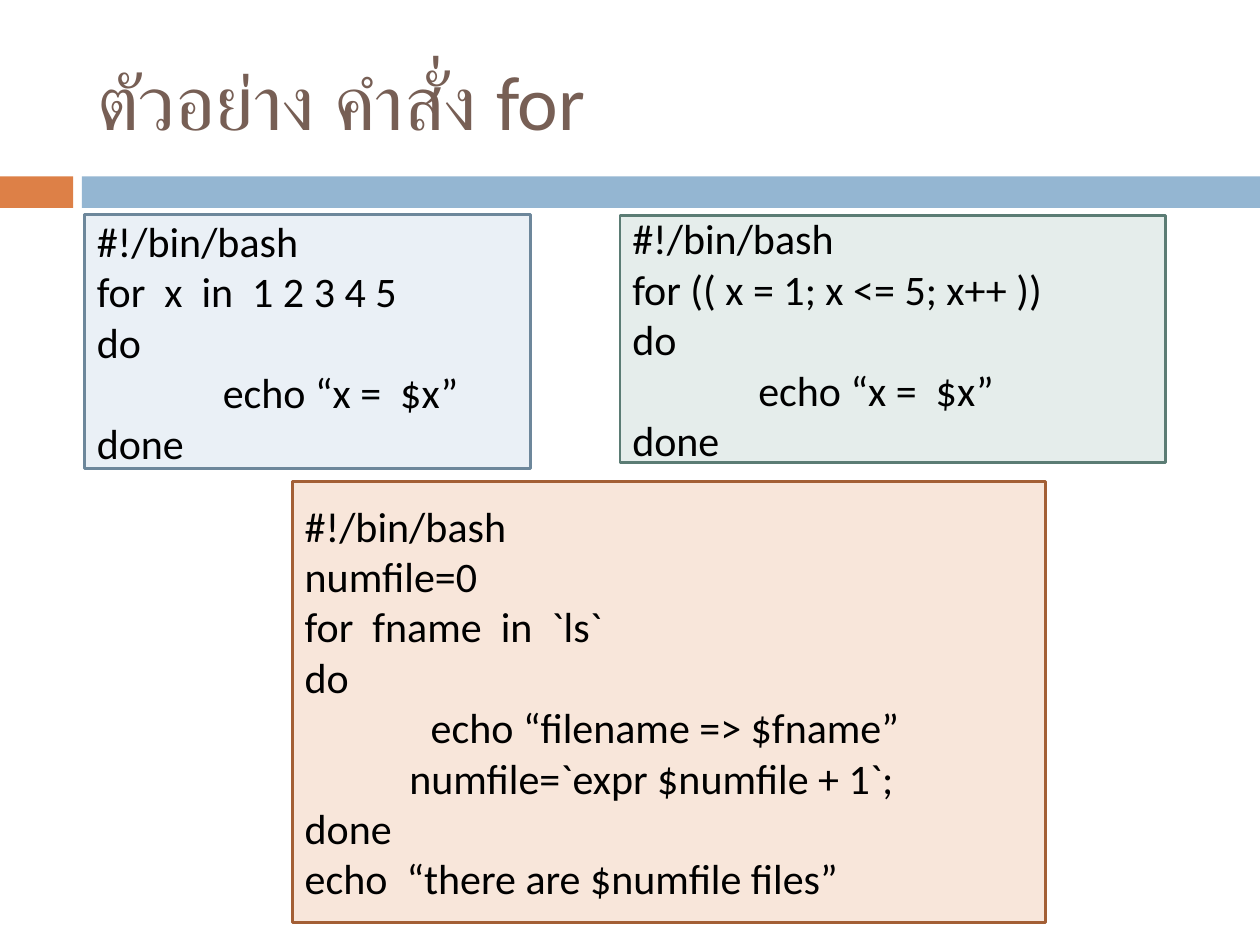
from dataclasses import dataclass

from pptx import Presentation
from pptx.dml.color import RGBColor
from pptx.enum.shapes import MSO_SHAPE
from pptx.enum.text import MSO_ANCHOR, PP_ALIGN
from pptx.util import Inches, Pt


@dataclass(frozen=True)
class Theme:
    font: str = "Calibri"
    title_size: int = 44
    code_size: int = 24
    line_width: float = 1.5
    title: str = "775F55"
    text: str = "000000"
    orange: str = "DD8047"
    blue: str = "94B6D2"
    # (fill, outline) of each kind of code box
    code_blue: tuple = ("EAF0F6", "6D879B")
    code_green: tuple = ("E5EDEB", "5B7C74")
    code_orange: tuple = ("F8E6DA", "A35F35")


THEME = Theme()

# Each line of code is (indent in inches, text)
LIST_LOOP = [
    (0, "#!/bin/bash"),
    (0, "for  x  in  1 2 3 4 5"),
    (0, "do"),
    (1, "echo “x =  $x”"),
    (0, "done"),
]
COUNTER_LOOP = [
    (0, "#!/bin/bash"),
    (0, "for (( x = 1; x <= 5; x++ ))"),
    (0, "do"),
    (1, "echo “x =  $x”"),
    (0, "done"),
]
FILE_LOOP = [
    (0, "#!/bin/bash"),
    (0, "numfile=0"),
    (0, "for  fname  in  `ls`"),
    (0, "do"),
    (1, "echo “filename => $fname”"),
    (0.83, "numfile=`expr $numfile + 1`;"),
    (0, "done"),
    (0, "echo  “there are $numfile files”"),
]


def add_text(p, text, *, size, color, indent=0):
    p.alignment = PP_ALIGN.LEFT
    if indent:
        p._p.get_or_add_pPr().set("marL", str(Inches(indent)))
    r = p.add_run()
    r.text = text
    r.font.name = THEME.font
    r.font.size = Pt(size)
    r.font.color.rgb = RGBColor.from_string(color)


def add_rect(s, box, fill, line=None):
    sp = s.shapes.add_shape(MSO_SHAPE.RECTANGLE, *map(Inches, box))
    sp.shadow.inherit = False
    sp.fill.solid()
    sp.fill.fore_color.rgb = RGBColor.from_string(fill)
    if line:
        sp.line.color.rgb = RGBColor.from_string(line)
        sp.line.width = Pt(THEME.line_width)
    else:
        sp.line.fill.background()
    return sp


def add_band(s, box, tab=0.58, gap=0.07):
    """Draw a short orange tab and, after a gap, a blue bar to the box's end."""
    left, top, width, height = box
    start = tab + gap
    add_rect(s, (left, top, tab, height), THEME.orange)
    add_rect(s, (left + start, top, width - start, height), THEME.blue)


def add_title(s, box, text):
    sp = s.shapes.title
    sp.left, sp.top, sp.width, sp.height = map(Inches, box)
    tf = sp.text_frame
    tf.vertical_anchor = MSO_ANCHOR.MIDDLE
    add_text(tf.paragraphs[0], text, size=THEME.title_size, color=THEME.title)


def add_code(s, box, lines, colors):
    tf = add_rect(s, box, *colors).text_frame
    tf.word_wrap = True
    tf.vertical_anchor = MSO_ANCHOR.MIDDLE
    for i, (indent, text) in enumerate(lines):
        p = tf.add_paragraph() if i else tf.paragraphs[0]
        add_text(p, text, size=THEME.code_size, color=THEME.text, indent=indent)


def main():
    prs = Presentation()
    prs.slide_width, prs.slide_height = Inches(10), Inches(7.5)
    s = prs.slides.add_slide(prs.slide_layouts.get_by_name("Title Only"))
    add_band(s, (0, 1.4, 10, 0.25))
    add_title(s, (0.67, 0.25, 8.92, 1.08), "ตัวอย่าง คำสั่ง for")
    add_code(s, (0.67, 1.7, 3.54, 2.02), LIST_LOOP, THEME.code_blue)
    add_code(s, (4.92, 1.71, 4.33, 1.96), COUNTER_LOOP, THEME.code_green)
    add_code(s, (2.32, 3.82, 5.98, 3.5), FILE_LOOP, THEME.code_orange)
    prs.save("out.pptx")


if __name__ == "__main__":
    main()
